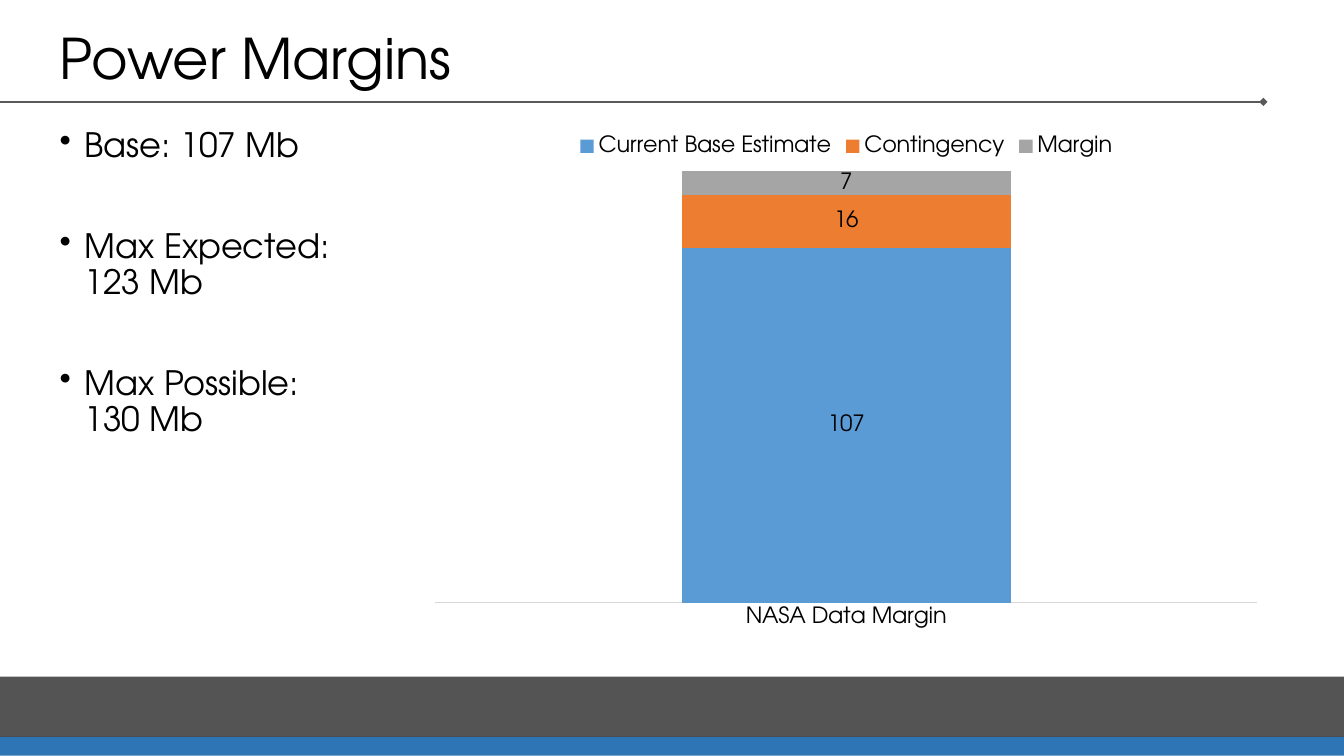
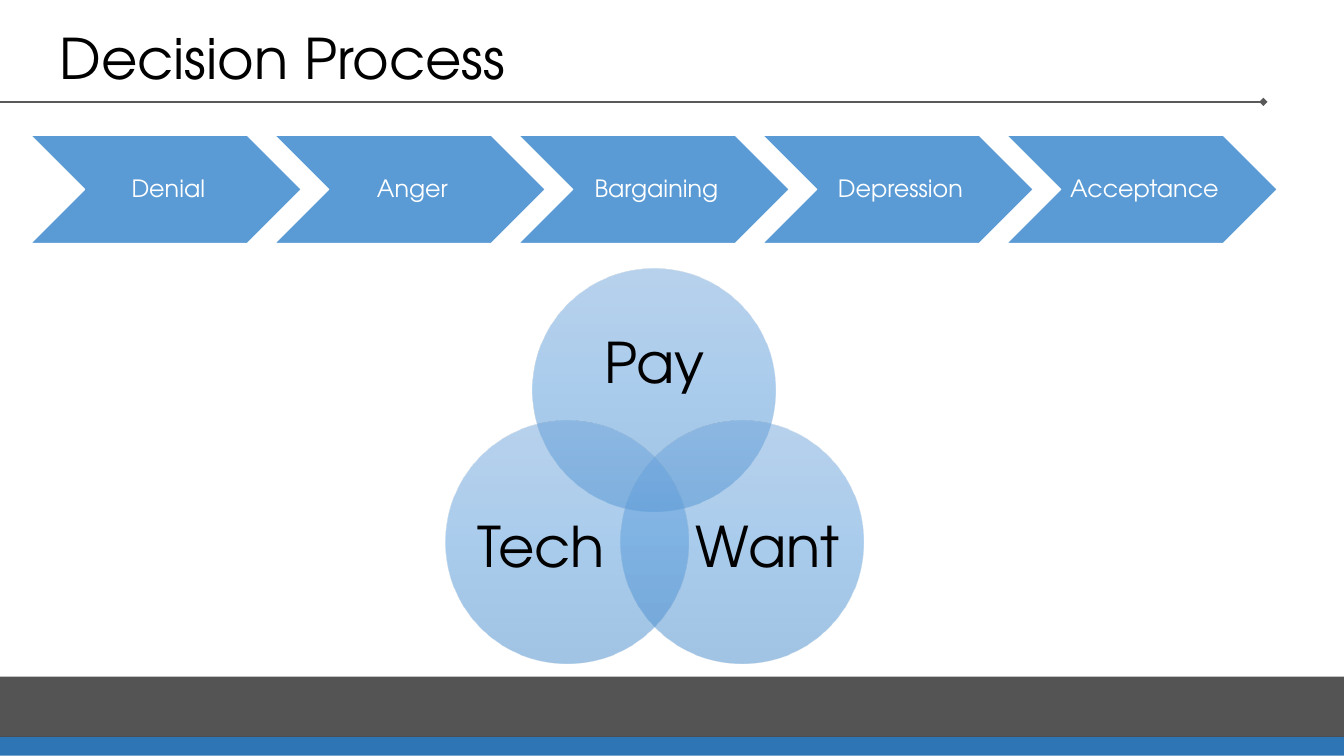
from dataclasses import dataclass
from math import cos, radians, sin

from lxml import etree
from pptx import Presentation
from pptx.chart.data import CategoryChartData
from pptx.dml.color import RGBColor
from pptx.enum.chart import XL_CHART_TYPE, XL_LEGEND_POSITION, XL_TICK_MARK
from pptx.enum.shapes import MSO_CONNECTOR, MSO_SHAPE
from pptx.enum.text import MSO_ANCHOR, PP_ALIGN
from pptx.oxml.ns import qn
from pptx.util import Inches, Pt

RECTANGLE, CHEVRON, OVAL = MSO_SHAPE.RECTANGLE, MSO_SHAPE.CHEVRON, MSO_SHAPE.OVAL
STRAIGHT = MSO_CONNECTOR.STRAIGHT
STACKED_100 = XL_CHART_TYPE.COLUMN_STACKED_100
LEGEND_TOP = XL_LEGEND_POSITION.TOP
NO_TICKS = XL_TICK_MARK.NONE
LEFT, CENTER = PP_ALIGN.LEFT, PP_ALIGN.CENTER
TOP, MIDDLE, BOTTOM = MSO_ANCHOR.TOP, MSO_ANCHOR.MIDDLE, MSO_ANCHOR.BOTTOM
COLUMNS = 80


@dataclass(frozen=True)
class Theme:
    font: str = "TeX Gyre Adventor"
    text: str = "000000"
    light: str = "FFFFFF"
    rule: str = "595959"
    band: str = "000000"
    band_opacity: int = 67
    strip: str = "2E75B6"
    step: str = "5B9BD5"
    axis: str = "D9D9D9"
    series: tuple = ("5B9BD5", "ED7D31", "A5A5A5")
    venn: tuple = ((0, "71A6DB"), (50, "559BDB"), (100, "448ACA"))
    venn_opacity: int = 50
    title_size: int = 40
    body_size: int = 24
    step_size: int = 17
    chart_size: int = 16
    line_spacing: float = 0.9
    bullet_gap: int = 46


def add_alpha(color, percent):
    etree.SubElement(color, qn("a:alpha"), val=str(percent * 1000))


class Deck:
    def __init__(self, theme):
        self.theme = theme
        self.prs = Presentation()
        self.prs.slide_width = Inches(13.33)
        self.prs.slide_height = Inches(7.5)
        self.unit = self.prs.slide_width / COLUMNS
        self.slide = None

    def grid(self, *cells):
        return [round(cell * self.unit) for cell in cells]

    def style_font(self, font, size, color):
        font.name = self.theme.font
        font.size = Pt(size)
        font.color.rgb = RGBColor.from_string(color)

    def new_slide(self, title):
        self.slide = self.prs.slides.add_slide(self.prs.slide_layouts[6])
        self.rule(75.2, 6.07)
        self.shape(RECTANGLE, (0, 43.88, COLUMNS, 1.12), self.theme.strip)
        band = self.shape(RECTANGLE, (0, 40.28, COLUMNS, 3.6), self.theme.band)
        fill = band._element.spPr.find(qn("a:solidFill"))
        add_alpha(fill.find(qn("a:srgbClr")), self.theme.band_opacity)
        self.text((2.95, 0.78, 71.95, 4.98), title, self.theme.title_size, anchor=BOTTOM)

    def rule(self, end, top):
        rule = self.slide.shapes.add_connector(STRAIGHT, *self.grid(0, top, end, top))
        rule.line.color.rgb = RGBColor.from_string(self.theme.rule)
        rule.line.width = Pt(1)
        properties = rule._element.spPr
        etree.SubElement(properties.find(qn("a:ln")), qn("a:tailEnd"), type="diamond")
        etree.SubElement(properties, qn("a:effectLst"))

    def shape(self, preset, box, color=None, outline=None):
        shape = self.slide.shapes.add_shape(preset, *self.grid(*box))
        shape.shadow.inherit = False
        if color:
            shape.fill.solid()
            shape.fill.fore_color.rgb = RGBColor.from_string(color)
        if outline:
            shape.line.color.rgb = RGBColor.from_string(outline)
            shape.line.width = Pt(1)
        else:
            shape.line.fill.background()
        return shape

    def fill_frame(self, frame, text, size, color, align, anchor):
        frame.word_wrap = True
        frame.vertical_anchor = anchor
        frame.text = text
        for paragraph in frame.paragraphs:
            paragraph.alignment = align
            paragraph.line_spacing = self.theme.line_spacing
            for run in paragraph.runs:
                self.style_font(run.font, size, color)

    def text(self, box, text, size, align=LEFT, anchor=TOP):
        frame = self.slide.shapes.add_textbox(*self.grid(*box)).text_frame
        self.fill_frame(frame, text, size, self.theme.text, align, anchor)
        return frame

    def bullets(self, box, items):
        frame = self.text(box, "\n".join(items), self.theme.body_size)
        for index, paragraph in enumerate(frame.paragraphs):
            properties = paragraph._p.get_or_add_pPr()
            properties.set("marL", str(Inches(0.25)))
            properties.set("indent", str(-Inches(0.25)))
            etree.SubElement(properties, qn("a:buChar"), char="•")
            self.style_font(paragraph.font, self.theme.body_size, self.theme.text)
            if index:
                paragraph.space_before = Pt(self.theme.bullet_gap)

    def stacked_chart(self, box, category, parts):
        theme = self.theme
        data = CategoryChartData(number_format="#,##0")
        data.categories = [category]
        for name, value in parts:
            data.add_series(name, [value])
        chart = self.slide.shapes.add_chart(STACKED_100, *self.grid(*box), data).chart
        self.style_font(chart.font, theme.chart_size, theme.text)
        chart.has_title = False
        chart.has_legend = True
        chart.legend.position = LEGEND_TOP
        chart.legend.include_in_layout = False
        self.style_font(chart.legend.font, theme.chart_size, theme.text)
        chart.value_axis.visible = False
        chart.value_axis.has_major_gridlines = False
        axis = chart.category_axis
        axis.major_tick_mark = NO_TICKS
        axis.format.line.color.rgb = RGBColor.from_string(theme.axis)
        axis.format.line.width = Pt(0.75)
        self.style_font(axis.tick_labels.font, theme.chart_size, theme.text)
        plot = chart.plots[0]
        plot.gap_width = 150
        plot.overlap = 100
        plot.vary_by_categories = False
        for series, color in zip(plot.series, theme.series):
            series.format.fill.solid()
            series.format.fill.fore_color.rgb = RGBColor.from_string(color)
            labels = series.data_labels
            labels.show_value = True
            labels.number_format = "#,##0"
            labels.number_format_is_linked = False
            self.style_font(labels.font, theme.chart_size, theme.text)

    def chevrons(self, left, top, width, steps):
        for index, step in enumerate(steps):
            box = (left + index * 0.9 * width, top, width, 0.4 * width)
            chevron = self.shape(CHEVRON, box, self.theme.step, self.theme.light)
            frame = chevron.text_frame
            frame.margin_left = Inches(0.07)
            frame.margin_right = frame.margin_top = frame.margin_bottom = Inches(0.02)
            self.fill_frame(frame, step, self.theme.step_size, self.theme.light, CENTER, MIDDLE)

    def venn_circle(self, x, y, diameter):
        box = (x - diameter / 2, y - diameter / 2, diameter, diameter)
        circle = self.shape(OVAL, box)
        circle.fill.gradient()
        circle.fill.gradient_angle = 270
        stops = circle._element.spPr.find(qn("a:gradFill")).find(qn("a:gsLst"))
        for stop in list(stops):
            stops.remove(stop)
        for position, color in self.theme.venn:
            stop = etree.SubElement(stops, qn("a:gs"), pos=str(position * 1000))
            tint = etree.SubElement(stop, qn("a:srgbClr"), val=color)
            add_alpha(tint, self.theme.venn_opacity)

    def venn(self, x, y, ring, diameter, sets):
        width, height = 10.6, 6.5
        for index, (name, shift_x, shift_y) in enumerate(sets):
            angle = radians(120 * index - 90)
            center_x, center_y = x + ring * cos(angle), y + ring * sin(angle)
            self.venn_circle(center_x, center_y, diameter)
            box = (center_x + shift_x - width / 2, center_y + shift_y - height / 2, width, height)
            frame = self.text(box, name, self.theme.title_size, CENTER, MIDDLE)
            frame.margin_left = frame.margin_right = 0
            frame.margin_top = frame.margin_bottom = 0


def main():
    deck = Deck(Theme())

    deck.new_slide("Power Margins")
    deck.stacked_chart(
        (24.9, 7.38, 50.95, 30.6),
        "NASA Data Margin",
        [("Current Base Estimate", 107), ("Contingency", 16), ("Margin", 7)],
    )
    deck.bullets(
        (2.95, 7.38, 21.9, 26.05),
        ["Base: 107 Mb", "Max Expected:\v123 Mb", "Max Possible:\v130 Mb"],
    )

    deck.new_slide("Decision Process")
    deck.chevrons(1.8, 8.05, 16.14, ["Denial", "Anger", "Bargaining", "Depression", "Acceptance"])
    deck.venn(
        38.95, 29.25, 6, 14.46,
        [("Pay", 0, -1.5), ("Want", 1.55, 0.45), ("Tech", -1.55, 0.45)],
    )

    deck.prs.save("out.pptx")


if __name__ == "__main__":
    main()
